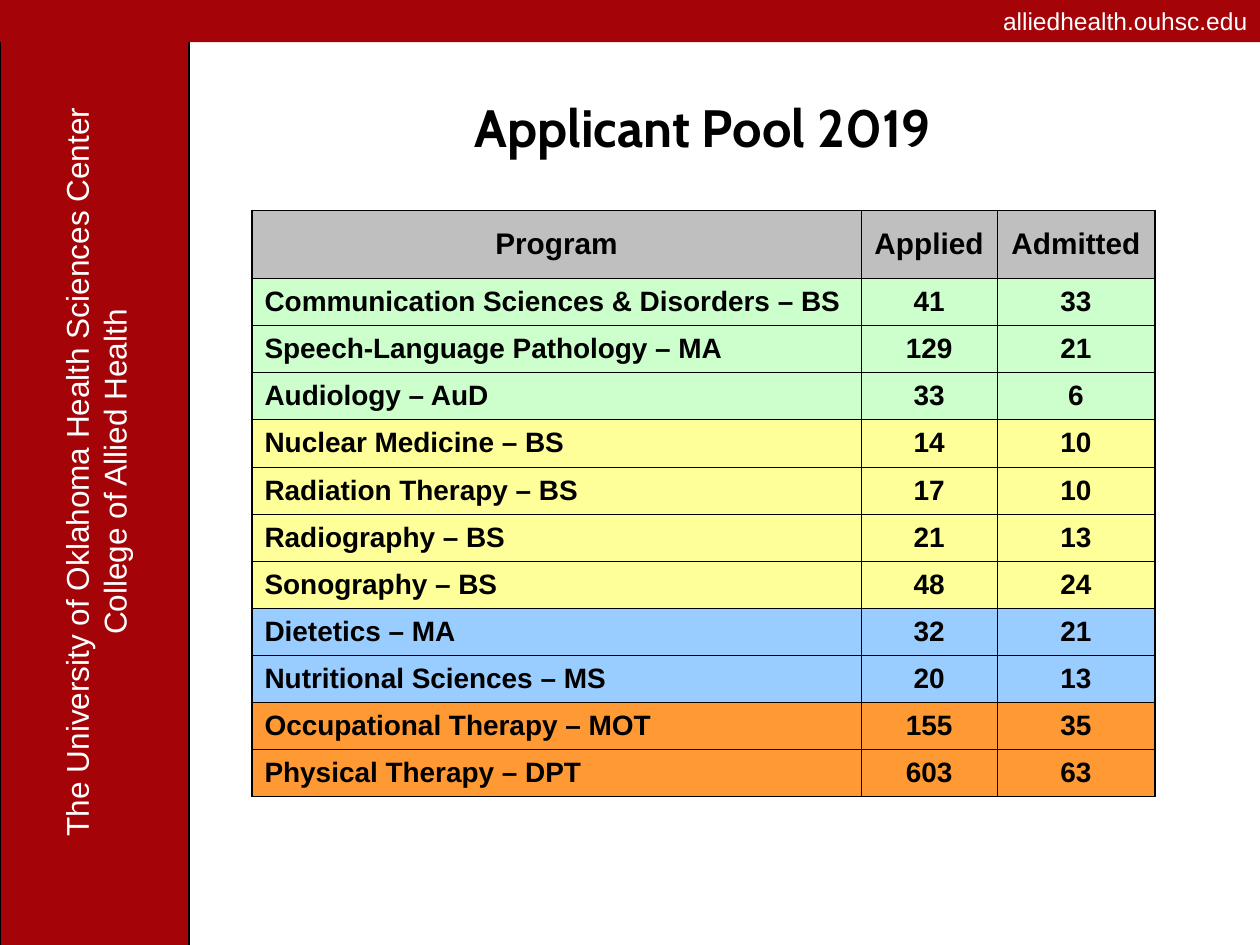
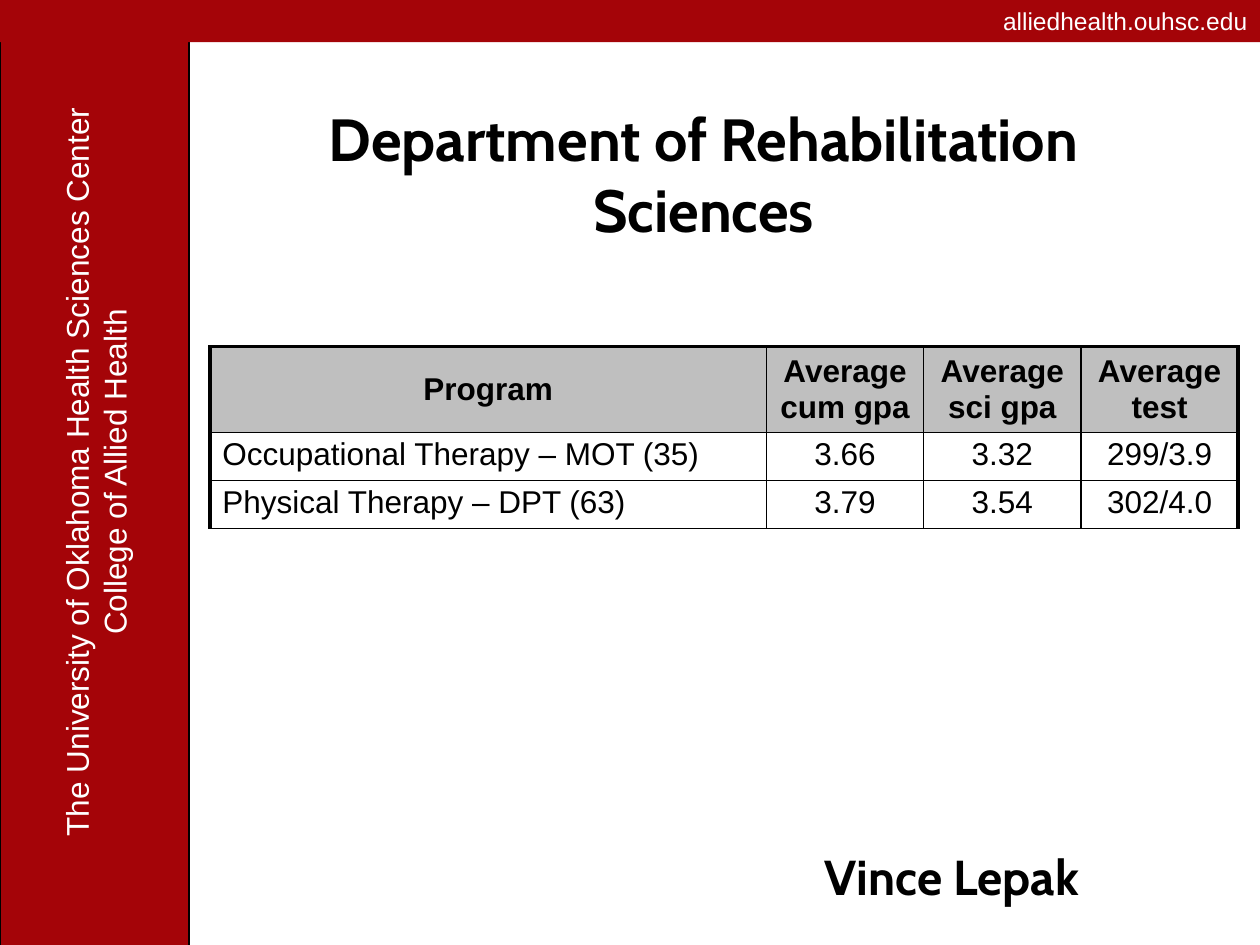
"""Build two applicant statistics slides for a college of allied health."""
from lxml.etree import SubElement
from pptx import Presentation
from pptx.dml.color import RGBColor
from pptx.enum.shapes import MSO_SHAPE as Shape
from pptx.enum.text import MSO_ANCHOR as Anchor, PP_ALIGN as Align
from pptx.oxml.ns import qn
from pptx.util import Cm, Pt

CRIMSON = RGBColor(0xA4, 0x04, 0x08)
WHITE = RGBColor(0xFF, 0xFF, 0xFF)
BLACK = RGBColor(0x00, 0x00, 0x00)
GREY = RGBColor(0xBF, 0xBF, 0xBF)
GREEN = RGBColor(0xCC, 0xFF, 0xCC)
YELLOW = RGBColor(0xFF, 0xFF, 0x99)
BLUE = RGBColor(0x99, 0xCC, 0xFF)
ORANGE = RGBColor(0xFF, 0x99, 0x33)
BODY_FONT, TITLE_FONT = "Arial", "Cabin"


def write(frame, text, size, font=BODY_FONT, color=BLACK, bold=False,
          align=Align.CENTER, wrap=True):
    frame.word_wrap = wrap
    paragraph = frame.paragraphs[0]
    paragraph.alignment = align
    for number, line in enumerate(text.split("\n")):
        if number:
            paragraph.add_line_break()
        run = paragraph.add_run()
        run.text = line
        run.font.name, run.font.size, run.font.bold = font, Pt(size), bold
        run.font.color.rgb = color


def add_grid(slide, left, top, widths, heights, rows, fills, sizes,
             bold_body, body_anchor, inner, outer, bottom):
    grid = slide.shapes.add_table(
        len(rows), len(widths), Cm(left), Cm(top),
        Cm(sum(widths)), Cm(sum(heights))).table
    grid.first_row = grid.horz_banding = False
    for column, width in zip(grid.columns, widths):
        column.width = Cm(width)
    for r, values in enumerate(rows):
        grid.rows[r].height = Cm(heights[r])
        for c, value in enumerate(values):
            cell = grid.cell(r, c)
            header = r == 0
            cell.vertical_anchor = Anchor.MIDDLE if header else body_anchor
            cell.margin_top = cell.margin_bottom = Cm(0.1)
            write(cell.text_frame, value, sizes[0] if header else sizes[1],
                  bold=header or bold_body,
                  align=Align.LEFT if c == 0 and not header else Align.CENTER)
            borders = {
                "a:lnL": outer if c == 0 else inner,
                "a:lnR": outer if c == len(widths) - 1 else inner,
                "a:lnT": outer if header else inner,
                "a:lnB": bottom if r == len(rows) - 1 else inner,
            }
            properties = cell._tc.get_or_add_tcPr()
            for side, weight in borders.items():
                edge = SubElement(properties, qn(side), w=str(Pt(weight)))
                paint = SubElement(edge, qn("a:solidFill"))
                SubElement(paint, qn("a:srgbClr"), val=str(BLACK))
            cell.fill.solid()
            cell.fill.fore_color.rgb = fills[r]


deck = Presentation()
deck.slide_width, deck.slide_height = Cm(25.4), Cm(19.05)
pool, rehab = [deck.slides.add_slide(deck.slide_layouts[6]) for _ in range(2)]

for slide in (pool, rehab):
    sidebar = slide.shapes.add_shape(
        Shape.RECTANGLE, Cm(0), Cm(0.21), Cm(3.81), Cm(19.05))
    sidebar.line.color.rgb = BLACK
    sidebar.line.width = Pt(0.75)

    college = slide.shapes.add_textbox(
        Cm(-5.78), Cm(8.46), Cm(15.4), Cm(2.11))
    college.rotation = 270
    college.text_frame.vertical_anchor = Anchor.MIDDLE
    write(college.text_frame,
          "The University of Oklahoma Health Sciences Center\n"
          "College of Allied Health", 18, color=WHITE, wrap=False)

    banner = slide.shapes.add_shape(
        Shape.RECTANGLE, Cm(0), Cm(0), Cm(25.4), Cm(0.85))
    banner.line.fill.background()
    banner.text_frame.vertical_anchor = Anchor.MIDDLE
    write(banner.text_frame, "alliedhealth.ouhsc.edu", 14, color=WHITE,
          align=Align.RIGHT, wrap=False)

    for band in (sidebar, banner):
        band.shadow.inherit = False
        band.fill.solid()
        band.fill.fore_color.rgb = CRIMSON

headings = [
    (pool, "Applicant Pool 2019", 30, (5.28, 1.7, 17.78, 1.7),
     Align.CENTER, Anchor.MIDDLE),
    (rehab, "Department of Rehabilitation Sciences", 34,
     (4.66, 2.12, 19.05, 2.75), Align.CENTER, Anchor.MIDDLE),
    (rehab, "Vince Lepak", 28, (12.9, 16.94, 9.1, 1.45),
     Align.RIGHT, Anchor.TOP),
]
for slide, text, size, place, align, anchor in headings:
    heading = slide.shapes.add_textbox(*map(Cm, place))
    heading.text_frame.vertical_anchor = anchor
    write(heading.text_frame, text, size, TITLE_FONT, bold=True, align=align)

applicants = [
    ("Program", "Applied", "Admitted"),
    ("Communication Sciences & Disorders – BS", "41", "33"),
    ("Speech-Language Pathology – MA", "129", "21"),
    ("Audiology – AuD", "33", "6"),
    ("Nuclear Medicine – BS", "14", "10"),
    ("Radiation Therapy – BS", "17", "10"),
    ("Radiography – BS", "21", "13"),
    ("Sonography – BS", "48", "24"),
    ("Dietetics – MA", "32", "21"),
    ("Nutritional Sciences – MS", "20", "13"),
    ("Occupational Therapy – MOT", "155", "35"),
    ("Physical Therapy – DPT", "603", "63"),
]
departments = [GREY] + [GREEN] * 3 + [YELLOW] * 4 + [BLUE] * 2 + [ORANGE] * 2
add_grid(pool, 5.08, 4.24, [12.28, 2.74, 3.18], [1.37] + [0.95] * 11,
         applicants, departments, (17, 16), bold_body=True,
         body_anchor=Anchor.MIDDLE, inner=0.25, outer=1, bottom=1)

averages = [
    ("Program", "Average cum gpa", "Average sci gpa", "Average test"),
    ("Occupational Therapy – MOT (35)", "3.66", "3.32", "299/3.9"),
    ("Physical Therapy – DPT (63)", "3.79", "3.54", "302/4.0"),
]
add_grid(rehab, 4.23, 6.99, [11.22] + [3.17] * 3, [1.68, 0.97, 0.97],
         averages, [GREY, WHITE, WHITE], (18, 18), bold_body=False,
         body_anchor=Anchor.TOP, inner=1, outer=2.25, bottom=1)

deck.save("out.pptx")
